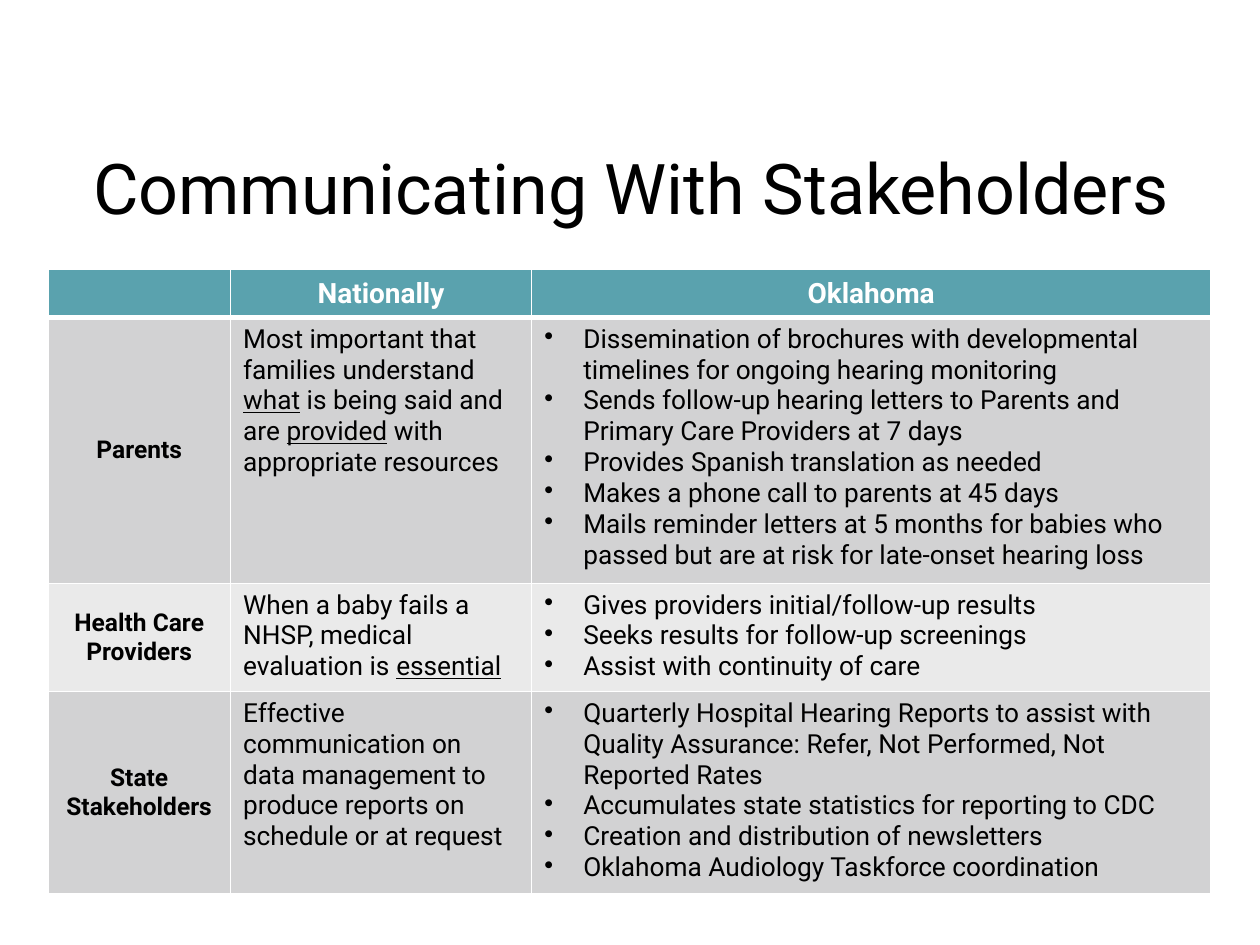
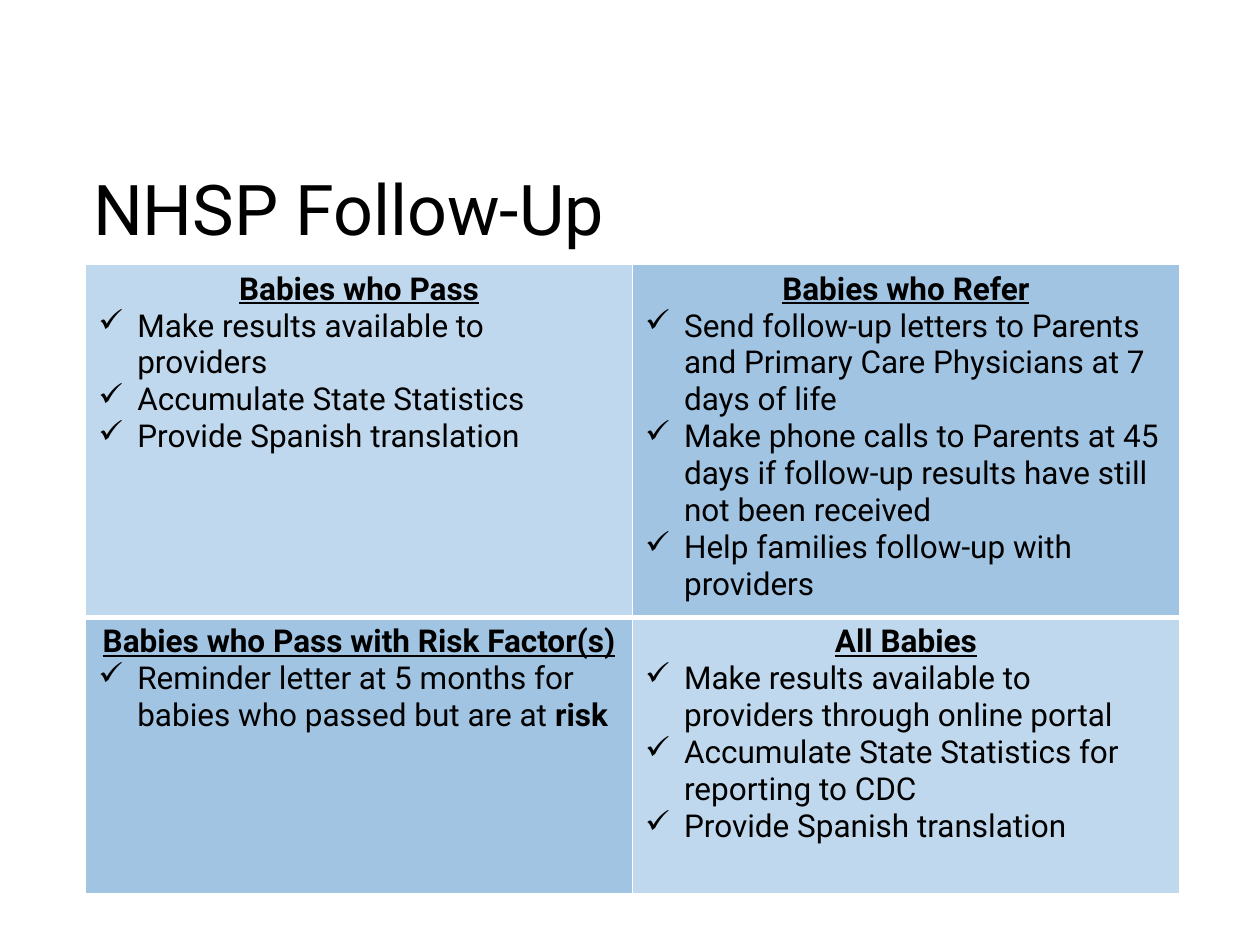
from dataclasses import dataclass

from lxml import etree
from pptx import Presentation
from pptx.dml.color import RGBColor
from pptx.enum.text import MSO_ANCHOR, PP_ALIGN
from pptx.oxml.ns import qn
from pptx.util import Inches, Pt

TOP, MIDDLE, BOTTOM = MSO_ANCHOR.TOP, MSO_ANCHOR.MIDDLE, MSO_ANCHOR.BOTTOM
LEFT, CENTER = PP_ALIGN.LEFT, PP_ALIGN.CENTER


@dataclass(frozen=True)
class Theme:
    font: str = "Roboto"
    text: str = "000000"
    white: str = "FFFFFF"
    teal: str = "5AA2AE"
    dark_gray: str = "D2D2D3"
    light_gray: str = "EAEAEA"
    light_blue: str = "C0D8ED"
    dark_blue: str = "A1C4E3"
    title_size: int = 40
    header_size: int = 16
    label_size: int = 14
    body_size: int = 15
    panel_size: int = 18
    thin_line: int = 1
    thick_line: int = 3
    bullet_indent: float = 0.31


THEME = Theme()

# Underscores enclose the emphasised words
STAKEHOLDERS = [
    (["Parents"],
     "Most important that families understand _what_ is being said and are "
     "_provided_ with appropriate resources",
     ["Dissemination of brochures with developmental timelines for ongoing hearing monitoring",
      "Sends follow-up hearing letters to Parents and Primary Care Providers at 7 days",
      "Provides Spanish translation as needed",
      "Makes a phone call to parents at 45 days",
      "Mails reminder letters at 5 months for babies who passed but are at risk "
      "for late-onset hearing loss"]),
    (["Health Care Providers"],
     "When a baby fails a NHSP, medical evaluation is _essential_",
     ["Gives providers initial/follow-up results",
      "Seeks results for follow-up screenings",
      "Assist with continuity of care"]),
    (["State", "Stakeholders"],
     "Effective communication on data management to produce reports on schedule or at request",
     ["Quarterly Hospital Hearing Reports to assist with Quality Assurance: "
      "Refer, Not Performed, Not Reported Rates",
      "Accumulates state statistics for reporting to CDC",
      "Creation and distribution of newsletters",
      "Oklahoma Audiology Taskforce coordination"]),
]

FOLLOW_UP = [
    [("Babies who Pass",
      ["Make results available to providers",
       "Accumulate State Statistics",
       "Provide Spanish translation"]),
     ("Babies who Refer",
      ["Send follow-up letters to Parents and Primary Care Physicians at 7 days of life",
       "Make phone calls to Parents at 45 days if follow-up results have still not been received",
       "Help families follow-up with providers"])],
    [("Babies who Pass with Risk Factor(s)",
      ["Reminder letter at 5 months for babies who passed but are at _risk_"]),
     ("All Babies",
      ["Make results available to providers through online portal",
       "Accumulate State Statistics for reporting to CDC",
       "Provide Spanish translation"])],
]


def add_bullet(paragraph, character):
    properties = paragraph._p.get_or_add_pPr()
    indent = Inches(THEME.bullet_indent)
    properties.set("marL", str(indent))
    properties.set("indent", str(-indent))
    bullet = etree.Element(qn("a:buChar"), char=character)
    default_font = properties.find(qn("a:defRPr"))
    default_font.addprevious(bullet)


def write_paragraph(frame, text, size, color=THEME.text, bold=False, underline=False,
                    align=LEFT, bullet=None, emphasis="underline"):
    """Fill the frame's first paragraph if it is unused, else append one."""
    paragraph = frame.paragraphs[0]
    if paragraph.runs:
        paragraph = frame.add_paragraph()
    paragraph.alignment = align
    font = paragraph.font
    font.name, font.size, font.bold, font.underline = THEME.font, Pt(size), bold, underline
    font.color.rgb = RGBColor.from_string(color)
    for index, part in enumerate(text.split("_")):
        if part:
            run = paragraph.add_run()
            run.text = part
            if index % 2:
                setattr(run.font, emphasis, True)
    if bullet:
        add_bullet(paragraph, bullet)
    return paragraph


def add_title(slide, text, top):
    box = slide.shapes.add_textbox(Inches(0.64), Inches(top), Inches(9.05), Inches(1.08))
    frame = box.text_frame
    frame.word_wrap = True
    frame.vertical_anchor = BOTTOM
    write_paragraph(frame, text, THEME.title_size).line_spacing = 0.9


def set_borders(cell, row):
    """White rules, with a thick one below the first row."""
    properties = cell._tc.get_or_add_tcPr()
    widths = {
        "a:lnL": THEME.thin_line,
        "a:lnR": THEME.thin_line,
        "a:lnT": THEME.thick_line if row == 1 else THEME.thin_line,
        "a:lnB": THEME.thick_line if row == 0 else THEME.thin_line,
    }
    for position, (tag, width) in enumerate(widths.items()):
        line = etree.Element(qn(tag), w=str(Pt(width)))
        fill = etree.SubElement(line, qn("a:solidFill"))
        etree.SubElement(fill, qn("a:srgbClr"), val=THEME.white)
        properties.insert(position, line)


def add_table(slide, left, top, column_widths, row_heights):
    shape = slide.shapes.add_table(
        len(row_heights), len(column_widths), Inches(left), Inches(top),
        Inches(sum(column_widths)), Inches(sum(row_heights)))
    table = shape.table
    table.first_row = table.horz_banding = False
    for column, width in zip(table.columns, column_widths):
        column.width = Inches(width)
    for row, height in zip(table.rows, row_heights):
        row.height = Inches(height)
    return table


def style_cell(table, row, column, fill, anchor=TOP):
    """Set a cell's fill, borders and anchor, and return its text frame."""
    cell = table.cell(row, column)
    cell.fill.solid()
    cell.fill.fore_color.rgb = RGBColor.from_string(fill)
    cell.vertical_anchor = anchor
    set_borders(cell, row)
    return cell.text_frame


def build_stakeholders(slide):
    add_title(slide, "Communicating With Stakeholders", 0.79)
    table = add_table(slide, 0.38, 2.14, [1.45, 2.39, 5.39], [0.38, 2.11, 0.86, 1.57])

    # Header row
    for column, heading in enumerate(["", "Nationally", "Oklahoma"]):
        frame = style_cell(table, 0, column, THEME.teal, MIDDLE)
        cell = table.cell(0, column)
        cell.margin_top = cell.margin_bottom = Inches(0.02)
        write_paragraph(frame, heading, THEME.header_size, THEME.white,
                        bold=True, align=CENTER)

    # One row for each audience
    for row, (label, national, oklahoma) in enumerate(STAKEHOLDERS, start=1):
        fill = THEME.dark_gray if row % 2 else THEME.light_gray
        frame = style_cell(table, row, 0, fill, MIDDLE)
        for line in label:
            write_paragraph(frame, line, THEME.label_size, bold=True, align=CENTER)
        frame = style_cell(table, row, 1, fill)
        write_paragraph(frame, national, THEME.body_size)
        frame = style_cell(table, row, 2, fill)
        for item in oklahoma:
            write_paragraph(frame, item, THEME.body_size, bullet="•")


def build_follow_up(slide):
    add_title(slide, "NHSP Follow-Up", 0.96)
    table = add_table(slide, 0.68, 2.1, [4.34, 4.34], [2.74, 2.19])

    # Checkerboard of outcome panels
    for row, panels in enumerate(FOLLOW_UP):
        for column, (heading, items) in enumerate(panels):
            fill = THEME.dark_blue if (row + column) % 2 else THEME.light_blue
            frame = style_cell(table, row, column, fill)
            write_paragraph(frame, heading, THEME.panel_size, bold=True,
                            underline=True, align=CENTER)
            for item in items:
                write_paragraph(frame, item, THEME.panel_size, bullet="✓", emphasis="bold")


def main():
    presentation = Presentation()
    presentation.slide_width, presentation.slide_height = Inches(10), Inches(7.5)
    blank_layout = presentation.slide_layouts[6]
    for build in (build_stakeholders, build_follow_up):
        build(presentation.slides.add_slide(blank_layout))
    presentation.save("out.pptx")


if __name__ == "__main__":
    main()
